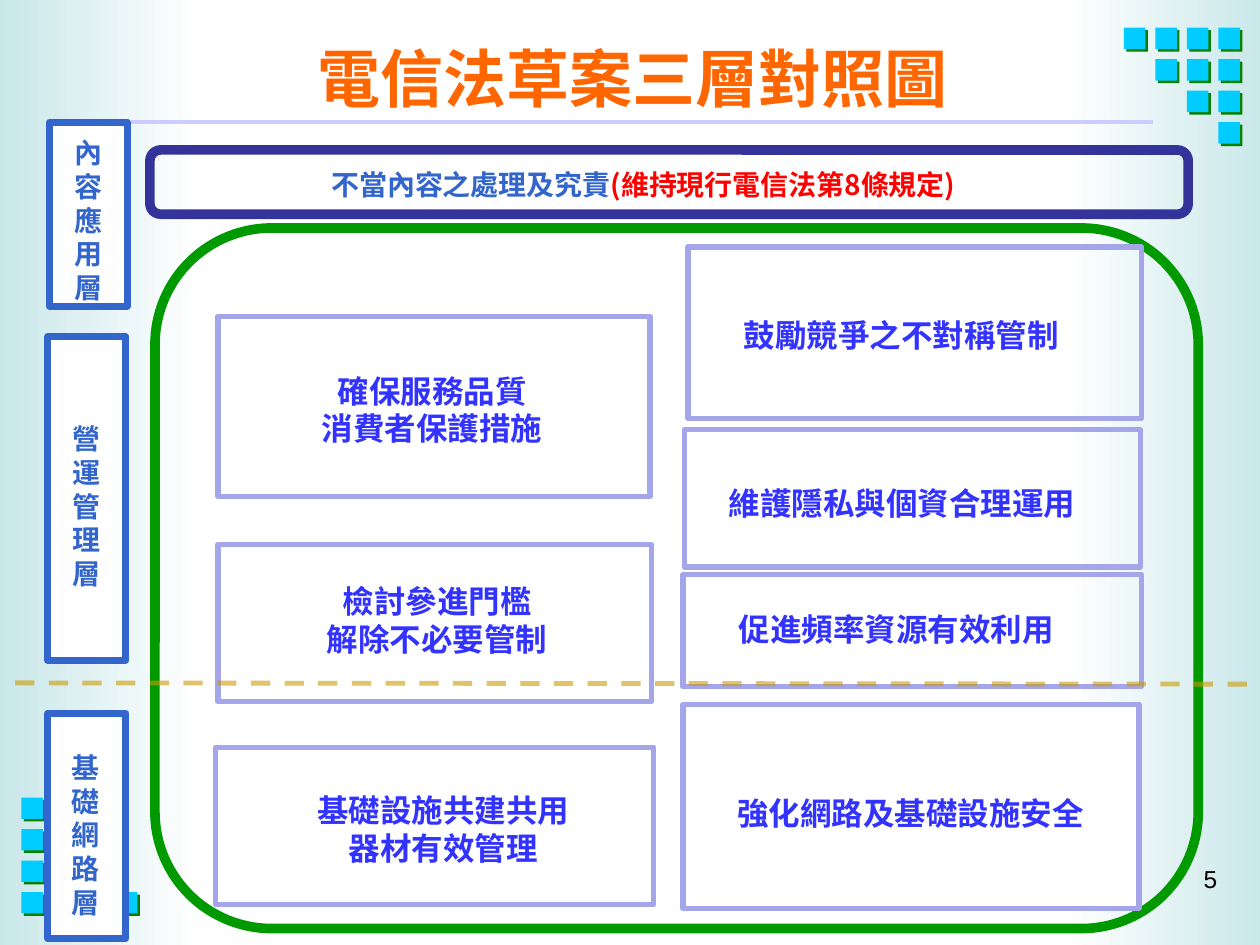
from typing import NamedTuple, Optional

from lxml import etree
from pptx import Presentation
from pptx.dml.color import RGBColor
from pptx.enum.dml import MSO_LINE
from pptx.enum.shapes import MSO_CONNECTOR as Connector, MSO_SHAPE as Preset
from pptx.enum.text import MSO_ANCHOR as Anchor, PP_ALIGN as Align
from pptx.oxml.ns import qn
from pptx.util import Inches, Pt

CJK_FONT = "Noto Sans CJK SC"
WHITE = RGBColor(0xFF, 0xFF, 0xFF)
BLACK = RGBColor(0x00, 0x00, 0x00)
PALE_TEAL = RGBColor(0xC9, 0xE7, 0xE9)
CYAN = RGBColor(0x00, 0xCC, 0xFF)
DARK_GREEN = RGBColor(0x00, 0x80, 0x00)
GREEN = RGBColor(0x00, 0x99, 0x00)
LAVENDER = RGBColor(0xCC, 0xCC, 0xFF)
LILAC = RGBColor(0xA5, 0xA5, 0xE9)
ORANGE = RGBColor(0xFF, 0x66, 0x00)
LAYER_BLUE = RGBColor(0x33, 0x66, 0xCC)
CARD_BLUE = RGBColor(0x33, 0x33, 0xFF)
NAVY = RGBColor(0x33, 0x33, 0x99)
RED = RGBColor(0xFF, 0x00, 0x00)
GOLD = RGBColor(0xCC, 0x99, 0x00)


class Box(NamedTuple):
    left: float
    top: float
    width: float
    height: float

    def lengths(self) -> list:
        return [Inches(value) for value in self]


class Panel(NamedTuple):
    frame: Box
    text_box: Box
    lines: list
    align: Align = Align.CENTER
    fill: Optional[RGBColor] = None
    text_fill: Optional[RGBColor] = None


LAYERS = [
    Panel(Box(0.39, 0.97, 0.62, 1.46), Box(0.49, 1.03, 0.31, 1.45),
          ["內容應用層"], Align.LEFT, WHITE),
    Panel(Box(0.38, 2.67, 0.62, 2.57), Box(0.48, 3.3, 0.4, 1.45),
          ["營運管理層"], Align.LEFT, WHITE),
    Panel(Box(0.38, 5.66, 0.62, 1.79), Box(0.47, 5.91, 0.4, 1.45),
          ["基礎", "網路", "層"], Align.LEFT, WHITE),
]
CARDS = [
    Panel(Box(5.46, 1.96, 3.6, 1.36), Box(5.79, 2.46, 2.73, 0.4),
          ["鼓勵競爭之不對稱管制"]),
    Panel(Box(1.73, 2.51, 3.43, 1.43), Box(1.73, 2.9, 3.4, 0.71),
          ["確保服務品質", "消費者保護措施"]),
    Panel(Box(1.73, 4.32, 3.44, 1.25), Box(1.79, 4.57, 3.36, 0.71),
          ["檢討參進門檻", "解除不必要管制"], text_fill=WHITE),
    Panel(Box(5.42, 4.56, 3.64, 0.89), Box(5.75, 4.79, 2.73, 0.4),
          ["促進頻率資源有效利用"]),
    Panel(Box(1.71, 5.93, 3.48, 1.25), Box(1.72, 6.23, 3.6, 0.71),
          ["基礎設施共建共用", "器材有效管理"]),
    Panel(Box(5.43, 3.41, 3.62, 1.09), Box(5.67, 3.79, 2.98, 0.4),
          ["維護隱私與個資合理運用"]),
    Panel(Box(5.42, 5.59, 3.62, 1.62), Box(5.45, 6.25, 3.55, 0.67),
          ["強化網路及基礎設施安全"], fill=WHITE, text_fill=WHITE),
]


def add_box(slide, box: Box, fill=None, line=None, line_width=1.0,
            preset=Preset.RECTANGLE):
    shape = slide.shapes.add_shape(preset, *box.lengths())
    shape.shadow.inherit = False
    if fill is None:
        shape.fill.background()
    else:
        shape.fill.solid()
        shape.fill.fore_color.rgb = fill
    if line is None:
        shape.line.fill.background()
    else:
        shape.line.color.rgb = line
        shape.line.width = Pt(line_width)
    return shape


def add_fade(slide, left: float, start: RGBColor, end: RGBColor) -> None:
    shape = add_box(slide, Box(left, 0, 1.57, 7.5))
    shape.fill.gradient()
    shape.fill.gradient_angle = 0
    for stop, color in zip(shape.fill.gradient_stops, (start, end)):
        stop.color.rgb = color


def add_square(slide, left: float, top: float) -> None:
    """A cyan square over its green drop shade."""
    for offset, color in ((0.02, DARK_GREEN), (0, CYAN)):
        add_box(slide, Box(left + offset, top + offset, 0.17, 0.17), color)


def add_line(slide, start: tuple, end: tuple, color: RGBColor, width: float):
    line = slide.shapes.add_connector(
        Connector.STRAIGHT, *[Inches(value) for value in (*start, *end)])
    line.line.color.rgb = color
    line.line.width = Pt(width)
    etree.SubElement(line._element.spPr, qn("a:effectLst"))
    return line


def style_paragraph(paragraph, size: float, color=None, name=CJK_FONT,
                    bold=True) -> None:
    font = paragraph.font
    font.size, font.bold, font.name = Pt(size), bold, name
    if color is not None:
        font.color.rgb = color
    properties = paragraph._p.pPr.find(qn("a:defRPr"))
    latin = properties.find(qn("a:latin"))
    east_asian = etree.Element(qn("a:ea"), typeface=name)
    latin.addnext(east_asian)


def add_text(slide, box: Box, lines: list, size: float, color: RGBColor,
             align=Align.CENTER, name=CJK_FONT, bold=True, fill=None):
    shape = slide.shapes.add_textbox(*box.lengths())
    if fill is not None:
        shape.fill.solid()
        shape.fill.fore_color.rgb = fill
    frame = shape.text_frame
    frame.word_wrap = True
    frame.text = "\n".join(lines)
    for paragraph in frame.paragraphs:
        paragraph.alignment = align
        style_paragraph(paragraph, size, color, name, bold)
    return shape


def add_panel(slide, panel: Panel, line: RGBColor, line_width: float,
              size: float, color: RGBColor) -> None:
    add_box(slide, panel.frame, panel.fill, line, line_width)
    add_text(slide, panel.text_box, panel.lines, size, color, panel.align,
             fill=panel.text_fill)


def main() -> None:
    presentation = Presentation()
    presentation.slide_width, presentation.slide_height = Inches(10), Inches(7.5)
    slide = presentation.slides.add_slide(presentation.slide_layouts[6])

    # Background fades, title rule and corner squares
    add_fade(slide, 8.47, WHITE, PALE_TEAL)
    add_fade(slide, 0, PALE_TEAL, WHITE)
    add_line(slide, (1.04, 0.97), (9.15, 0.97), LAVENDER, 2.25)
    pitch = 0.25
    for row in range(4):
        add_square(slide, 0.17, 6.33 + row * pitch)
    add_square(slide, 0.92, 6.33 + 3 * pitch)
    for column in range(4):
        for row in range(column + 1):
            add_square(slide, 8.92 + column * pitch, 0.22 + row * pitch)

    # Title
    title = add_text(slide, Box(0.52, 0.18, 9, 0.87),
                     ["電信法草案三層對照圖"], 36, ORANGE)
    title.text_frame.vertical_anchor = Anchor.MIDDLE

    # Layer labels, then the measures inside the green outline
    for layer in LAYERS:
        add_panel(slide, layer, LAYER_BLUE, 4, 16, LAYER_BLUE)
    add_box(slide, Box(1.23, 1.81, 8.28, 5.56), None, GREEN, 5.5,
            Preset.ROUNDED_RECTANGLE)
    for card in CARDS:
        add_panel(slide, card, LILAC, 3, 18, CARD_BLUE)

    # Content layer banner
    add_box(slide, Box(1.19, 1.19, 8.24, 0.51), None, NAVY, 5.5,
            Preset.ROUNDED_RECTANGLE)
    banner = slide.shapes.add_textbox(*Box(1.73, 1.28, 7.14, 0.37).lengths())
    banner.text_frame.word_wrap = True
    banner.text_frame.margin_left = Inches(0.9)
    paragraph = banner.text_frame.paragraphs[0]
    style_paragraph(paragraph, 16)
    for text, color in (("不當內容之處理及究責", LAYER_BLUE),
                        ("(維持現行電信法第8條規定)", RED)):
        run = paragraph.add_run()
        run.text = text
        run.font.color.rgb = color

    # Dashed divider above the network layer
    divider = add_line(slide, (0.12, 5.42), (10, 5.43), GOLD, 2.75)
    divider.line.dash_style = MSO_LINE.DASH
    color_element = divider._element.spPr.find(".//" + qn("a:srgbClr"))
    etree.SubElement(color_element, qn("a:alpha"), val="58000")

    # Page number
    add_text(slide, Box(7.68, 6.81, 2.08, 0.5), ["5"], 14, BLACK,
             Align.RIGHT, "Arial", False)

    presentation.save("out.pptx")


if __name__ == "__main__":
    main()
